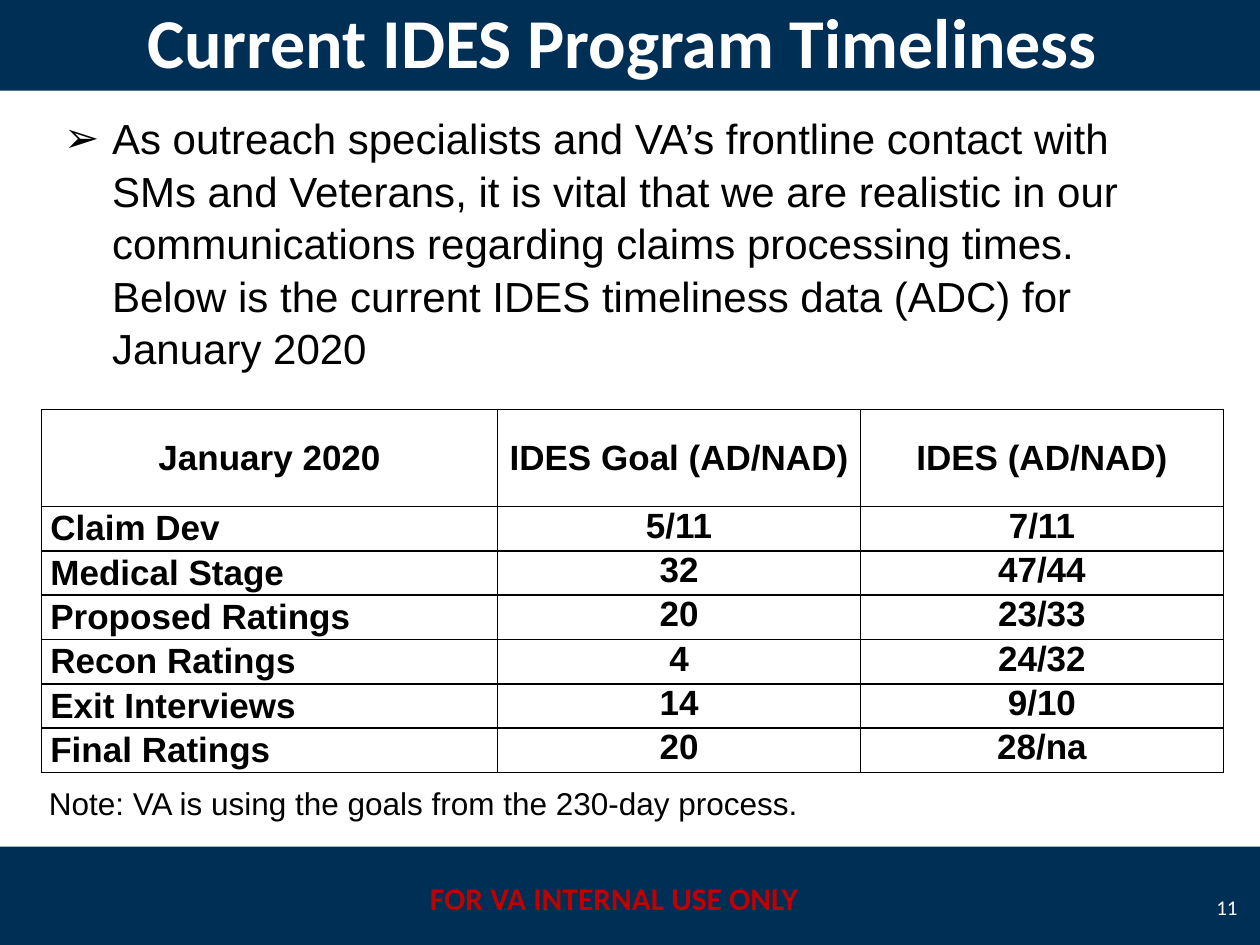
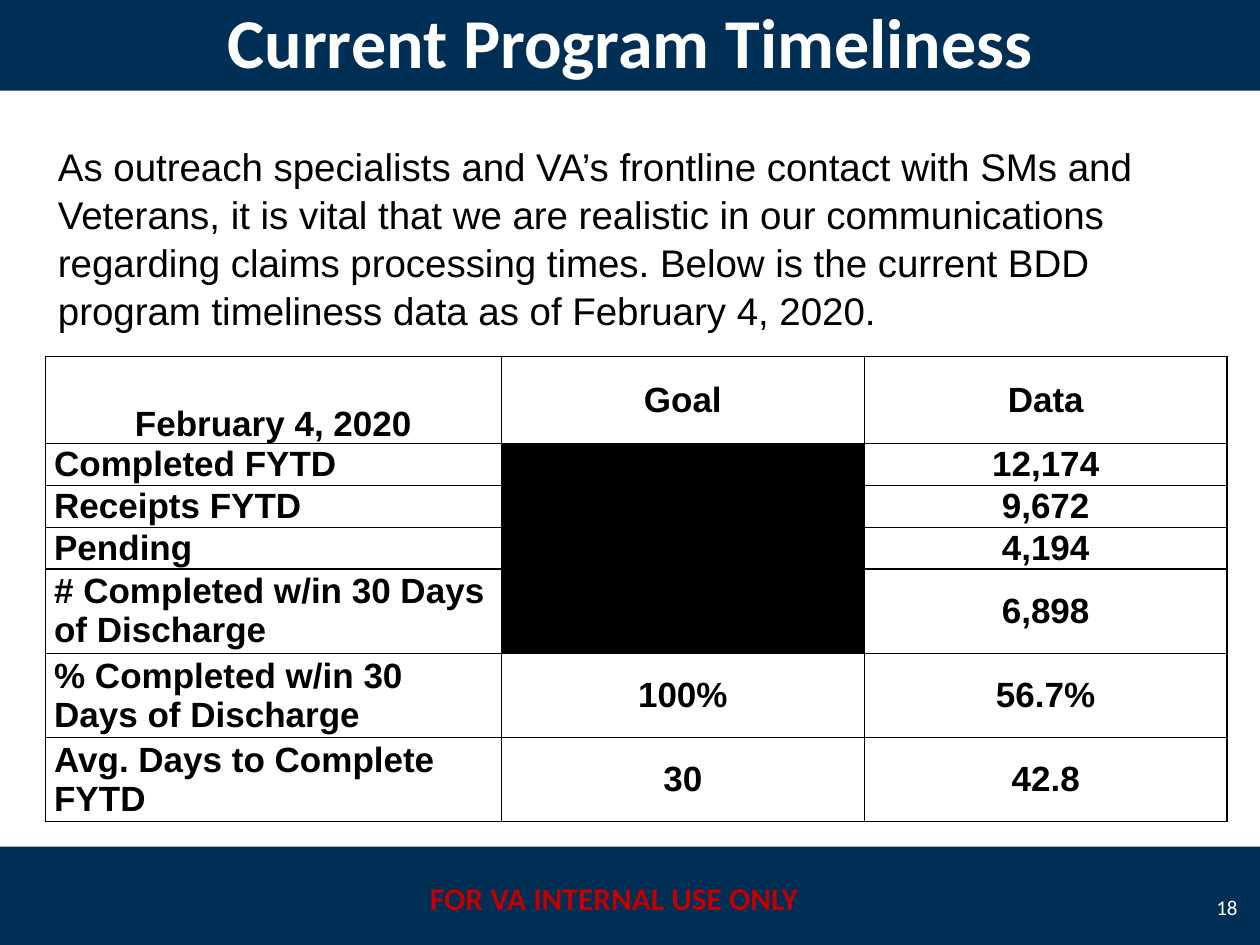
from dataclasses import dataclass

from lxml.etree import SubElement
from pptx import Presentation
from pptx.dml.color import RGBColor
from pptx.enum.shapes import MSO_SHAPE as Preset
from pptx.enum.text import MSO_ANCHOR as Anchor, MSO_AUTO_SIZE as AutoSize, PP_ALIGN as Align
from pptx.oxml.ns import qn
from pptx.util import Inches, Pt

GRID_COLUMNS, GRID_ROWS = 100, 75
SLIDE_WIDTH, SLIDE_HEIGHT = Inches(10), Inches(7.5)
TITLE_BAND = (0, -0.8, 100, 8)
FOOTER_BAND = (0, 67.2, 100, 8)
TABLE_COLUMNS = (36.2, 28.8, 28.8)


@dataclass(frozen=True)
class Theme:
    navy: str = "002F56"
    red: str = "C00000"
    white: str = "FFFFFF"
    black: str = "000000"
    heading_font: str = "Calibri"
    body_font: str = "Arial"
    title_size: int = 40
    table_size: int = 20
    note_size: int = 18
    number_size: int = 12


THEME = Theme()


def across(columns):
    return round(SLIDE_WIDTH * columns / GRID_COLUMNS)


def down(rows):
    return round(SLIDE_HEIGHT * rows / GRID_ROWS)


def area(left, top, width, height):
    return across(left), down(top), across(width), down(height)


def place(shape, box):
    shape.left, shape.top, shape.width, shape.height = area(*box)


def paint(fill, color):
    fill.solid()
    fill.fore_color.rgb = RGBColor.from_string(color)


def style_text(text_frame, size, color=THEME.black, font=THEME.body_font, bold=False, align=Align.LEFT):
    for paragraph in text_frame.paragraphs:
        paragraph.alignment = align
        paragraph.space_before = Pt(0)
        for run in paragraph.runs:
            run.font.name = font
            run.font.size = Pt(size)
            run.font.bold = bold
            run.font.color.rgb = RGBColor.from_string(color)


def add_text(slide, box, text, size, anchor=Anchor.TOP, **style):
    shape = slide.shapes.add_textbox(*area(*box))
    text_frame = shape.text_frame
    text_frame.word_wrap = True
    text_frame.vertical_anchor = anchor
    text_frame.text = text
    style_text(text_frame, size, **style)
    return shape


def add_band(slide, box):
    band = slide.shapes.add_shape(Preset.RECTANGLE, *area(*box))
    band.shadow.inherit = False
    paint(band.fill, THEME.navy)
    band.line.fill.background()
    return band


def share_bands_and_footer(slide):
    shared = [add_band(slide, box) for box in (FOOTER_BAND, TITLE_BAND)]
    shared.append(add_text(slide, (32.5, 69.3, 32.5, 4), "FOR VA INTERNAL USE ONLY", THEME.note_size,
                           color=THEME.red, font=THEME.heading_font, bold=True, align=Align.CENTER))
    for shape in shared:
        slide.slide_layout.shapes.element.append(shape.element)


def set_title(slide, text):
    title = slide.shapes.title
    place(title, TITLE_BAND)
    text_frame = title.text_frame
    text_frame.text = text
    text_frame.auto_size = AutoSize.NONE
    text_frame.vertical_anchor = Anchor.MIDDLE
    style_text(text_frame, THEME.title_size, color=THEME.white, font=THEME.heading_font,
               bold=True, align=Align.CENTER)


def set_bullet(paragraph, symbol, indent):
    properties = paragraph._p.get_or_add_pPr()
    properties.set("marL", str(across(indent)))
    properties.set("indent", str(-across(indent)))
    if symbol:
        SubElement(properties, qn("a:buFont")).set("typeface", THEME.body_font)
        SubElement(properties, qn("a:buChar")).set("char", symbol)
    else:
        SubElement(properties, qn("a:buNone"))


def set_body(slide, box, text, size, symbol=None, indent=0):
    body = slide.placeholders[1]
    place(body, box)
    text_frame = body.text_frame
    text_frame.text = text
    text_frame.auto_size = AutoSize.NONE
    for paragraph in text_frame.paragraphs:
        set_bullet(paragraph, symbol, indent)
        paragraph.line_spacing = 1.04
    style_text(text_frame, size)


def add_page_number(slide, number):
    add_text(slide, (95, 70, 4.2, 4), str(number), THEME.number_size, anchor=Anchor.MIDDLE,
             color=THEME.white, font=THEME.heading_font, align=Align.RIGHT)


def outline_cell(cell):
    properties = cell._tc.get_or_add_tcPr()
    for side in ("lnL", "lnR", "lnT", "lnB"):
        line = SubElement(properties, qn(f"a:{side}"), w=str(Pt(1)))
        fill = SubElement(line, qn("a:solidFill"))
        SubElement(fill, qn("a:srgbClr"), val=THEME.black)


def fill_cell(cell, text, align, anchor):
    outline_cell(cell)
    paint(cell.fill, THEME.black if text is None else THEME.white)
    cell.margin_left = cell.margin_right = Inches(0.07)
    cell.margin_top = cell.margin_bottom = 0
    cell.vertical_anchor = anchor
    if text is not None:
        cell.text = text
        style_text(cell.text_frame, THEME.table_size, bold=True, align=align)


def add_timeliness_table(slide, left, top, heights, rows, value_anchor=Anchor.MIDDLE, corner_anchor=Anchor.MIDDLE):
    box = area(left, top, sum(TABLE_COLUMNS), sum(heights))
    table = slide.shapes.add_table(len(rows), len(TABLE_COLUMNS), *box).table
    table.first_row = table.horz_banding = False
    for column, width in zip(table.columns, TABLE_COLUMNS):
        column.width = across(width)
    for row, height in zip(table.rows, heights):
        row.height = down(height)
    for r, values in enumerate(rows):
        for c, text in enumerate(values):
            align = Align.LEFT if r and not c else Align.CENTER
            anchor = value_anchor if r and c else Anchor.MIDDLE
            if r == c == 0:
                anchor = corner_anchor
            fill_cell(table.cell(r, c), text, align, anchor)


def build_ides_slide(slide):
    set_title(slide, "Current IDES Program Timeliness ")
    set_body(slide, (4.1, 8.3, 91.7, 21.2),
             "As outreach specialists and VA’s frontline contact with SMs and Veterans, it is vital "
             "that we are realistic in our communications regarding claims processing times. Below is "
             "the current IDES timeliness data (ADC) for January 2020", 24, symbol="➢", indent=3.8)
    rows = [
        ("January 2020", "IDES Goal (AD/NAD)", "IDES (AD/NAD)"),
        ("Claim Dev", "5/11", "7/11"),
        ("Medical Stage", "32", "47/44"),
        ("Proposed Ratings", "20", "23/33"),
        ("Recon Ratings", "4", "24/32"),
        ("Exit Interviews", "14", "9/10"),
        ("Final Ratings", "20", "28/na"),
    ]
    add_timeliness_table(slide, 3.3, 32.5, [7.7] + [3.52] * 6, rows, value_anchor=Anchor.TOP)
    add_text(slide, (2.9, 61.7, 88.8, 4), "Note: VA is using the goals from the 230-day process.",
             THEME.note_size)
    add_page_number(slide, 11)


def build_bdd_slide(slide):
    set_title(slide, "Current Program Timeliness")
    set_body(slide, (3.6, 10.7, 95, 15.8),
             "As outreach specialists and VA’s frontline contact with SMs and\n"
             "Veterans, it is vital that we are realistic in our communications regarding claims "
             "processing times. Below is the current BDD program timeliness data as of February 4, 2020.",
             22)
    rows = [
        ("February 4, 2020", "Goal", "Data"),
        ("Completed FYTD", None, "12,174"),
        ("Receipts FYTD", None, "9,672"),
        ("Pending", None, "4,194"),
        ("# Completed w/in 30 Days of Discharge", None, "6,898"),
        ("% Completed w/in 30 Days of Discharge", "100%", "56.7%"),
        ("Avg. Days to Complete FYTD", "30", "42.8"),
    ]
    add_timeliness_table(slide, 3.6, 28.3, [6.9] + [3.33] * 3 + [6.68] * 3, rows,
                         corner_anchor=Anchor.BOTTOM)
    add_page_number(slide, 18)


def main():
    presentation = Presentation()
    presentation.slide_width, presentation.slide_height = SLIDE_WIDTH, SLIDE_HEIGHT
    layout = presentation.slide_layouts.get_by_name("Title and Content")
    ides_slide, bdd_slide = (presentation.slides.add_slide(layout) for _ in range(2))
    share_bands_and_footer(ides_slide)
    build_ides_slide(ides_slide)
    build_bdd_slide(bdd_slide)
    presentation.save("out.pptx")


if __name__ == "__main__":
    main()
